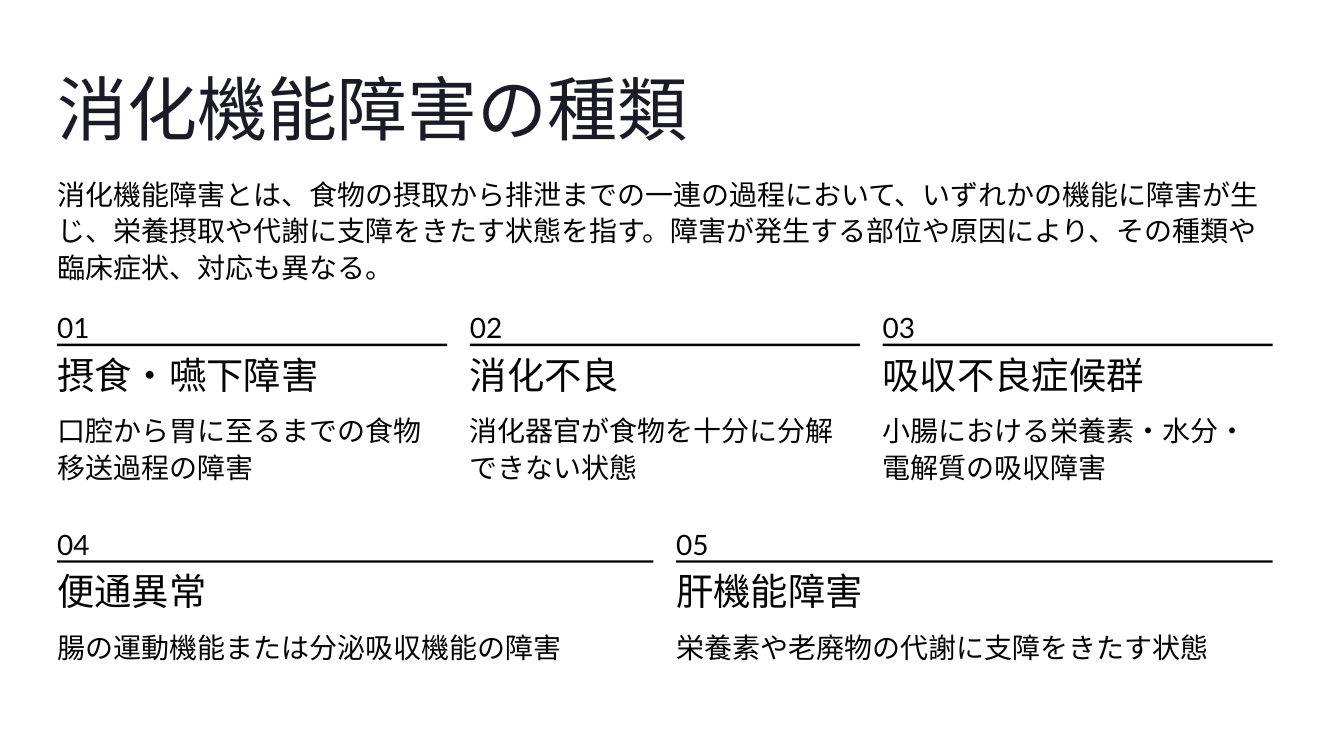
from lxml.etree import SubElement
from pptx import Presentation
from pptx.dml.color import RGBColor
from pptx.enum.shapes import MSO_SHAPE
from pptx.enum.text import MSO_ANCHOR, PP_ALIGN
from pptx.oxml.ns import qn
from pptx.util import Inches, Pt


class DisorderSlide:
    """Holds the style and the slide, and draws each kind of element."""

    LEFT, WIDTH, GAP = 0.68, 14.47, 0.27
    INK, NAVY = "030303", "1B1B27"
    HEADING, BODY, NUMBER = "Inter", "Cabin", "Lato"

    def __init__(self, deck):
        self.slide = deck.slides.add_slide(deck.slide_layouts[6])

    def color(self, value):
        return RGBColor.from_string(value)

    def text(self, wording, left, top, width, height, font, size=24,
             spacing=31.5, ink=INK, wrap=False):
        box = self.slide.shapes.add_textbox(
            Inches(left), Inches(top), Inches(width), Inches(height))
        frame = box.text_frame
        frame.margin_left = frame.margin_right = 0
        frame.margin_top = frame.margin_bottom = 0
        frame.vertical_anchor = MSO_ANCHOR.TOP
        frame.word_wrap = wrap
        frame.text = wording
        paragraph = frame.paragraphs[0]
        paragraph.alignment = PP_ALIGN.LEFT
        paragraph.line_spacing = Pt(spacing)
        for run in paragraph.runs:
            run.font.size = Pt(size)
            run.font.color.rgb = self.color(ink)
            run.font.name = font
            for script in ("a:ea", "a:cs"):
                SubElement(run.font._element, qn(script), typeface=font)

    def rule(self, left, top, width):
        bar = self.slide.shapes.add_shape(
            MSO_SHAPE.RECTANGLE, Inches(left), Inches(top), Inches(width), Inches(0.03))
        bar.shadow.inherit = False
        bar.fill.solid()
        bar.fill.fore_color.rgb = self.color(self.INK)
        bar.line.fill.background()

    def disorder(self, number, name, summary, left, top, width, summary_height):
        self.text(f"{number:02}", left, top, 0.45, 0.34, self.NUMBER)
        self.rule(left, top + 0.43, width)
        self.text(name, left, top + 0.64, 3.42, 0.43, self.HEADING, 32, 30.5)
        self.text(summary, left, top + 1.23, width, summary_height, self.BODY, wrap=True)

    def row(self, disorders, first_number, top, summary_height):
        count = len(disorders)
        width = (self.WIDTH - self.GAP * (count - 1)) / count
        for column, (name, summary) in enumerate(disorders):
            left = self.LEFT + column * (width + self.GAP)
            self.disorder(first_number + column, name, summary,
                          left, top, width, summary_height)


UPPER_DISORDERS = [
    ("摂食・嚥下障害", "口腔から胃に至るまでの食物移送過程の障害"),
    ("消化不良", "消化器官が食物を十分に分解できない状態"),
    ("吸収不良症候群", "小腸における栄養素・水分・電解質の吸収障害"),
]
LOWER_DISORDERS = [
    ("便通異常", "腸の運動機能または分泌吸収機能の障害"),
    ("肝機能障害", "栄養素や老廃物の代謝に支障をきたす状態"),
]
OVERVIEW = (
    "消化機能障害とは、食物の摂取から排泄までの一連の過程において、"
    "いずれかの機能に障害が生じ、栄養摂取や代謝に支障をきたす状態を指す。"
    "障害が発生する部位や原因により、その種類や臨床症状、対応も異なる。"
)


def main():
    deck = Presentation()
    deck.slide_width, deck.slide_height = Inches(16), Inches(9)
    page = DisorderSlide(deck)
    page.text("消化機能障害の種類", page.LEFT, 0.92, 7.6, 0.86,
              page.HEADING, 60, 61.5, page.NAVY)
    page.text(OVERVIEW, page.LEFT, 2.07, page.WIDTH, 0.88, page.BODY, wrap=True)
    page.row(UPPER_DISORDERS, 1, 3.66, 0.88)
    page.row(LOWER_DISORDERS, 1 + len(UPPER_DISORDERS), 6.24, 0.44)
    deck.save("out.pptx")


if __name__ == "__main__":
    main()
